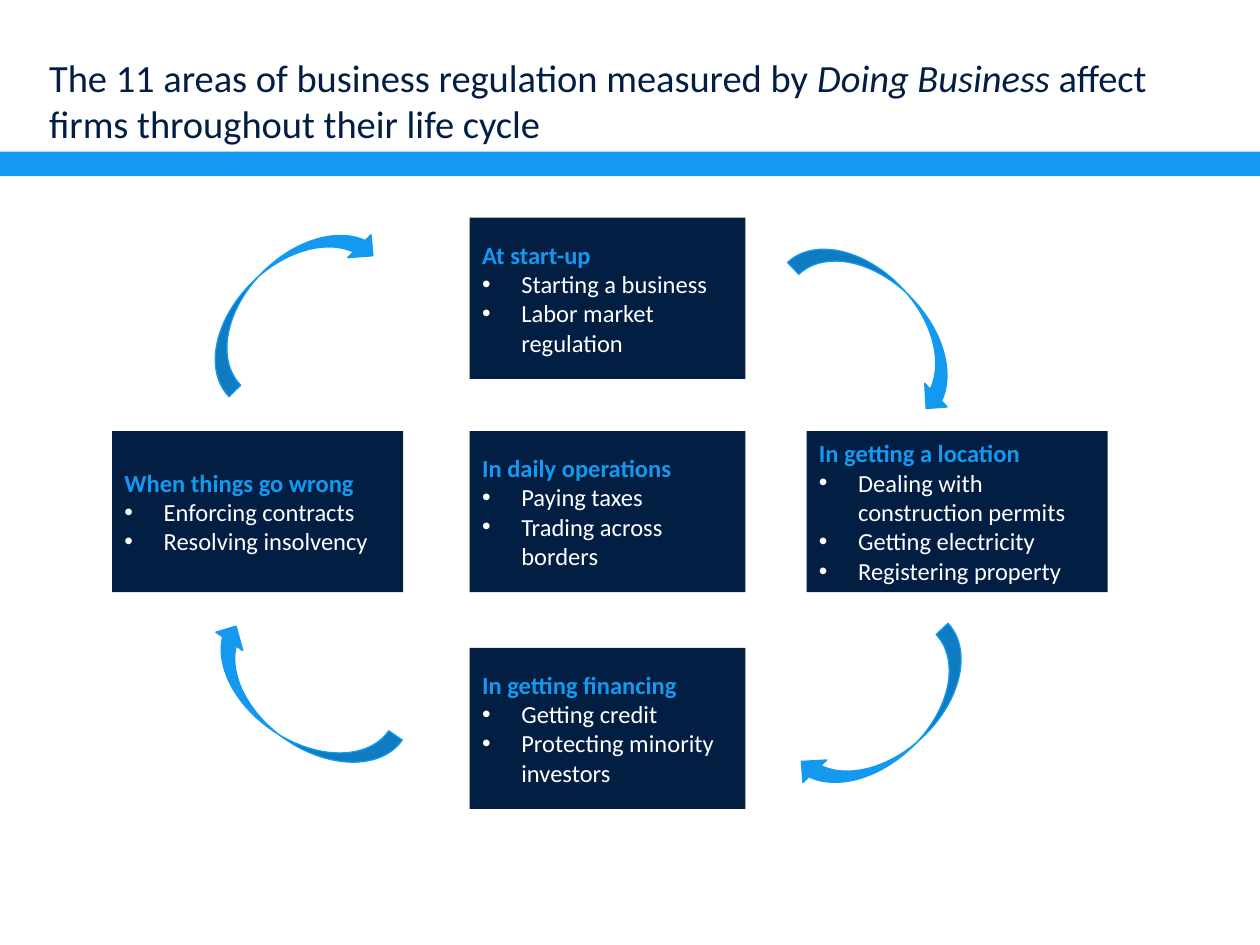
from lxml import etree
from pptx import Presentation
from pptx.dml.color import RGBColor
from pptx.enum.shapes import MSO_SHAPE
from pptx.enum.text import MSO_ANCHOR, MSO_AUTO_SIZE, PP_ALIGN
from pptx.oxml.ns import qn
from pptx.util import Cm, Pt

NAVY = RGBColor(0x02, 0x1F, 0x43)
BLUE = RGBColor(0x13, 0x9A, 0xF0)
WHITE = RGBColor(0xFF, 0xFF, 0xFF)
FONT = "Calibri"

ROW_TOPS = (4.39, 8.69, 13.06)
CENTER_X, CENTER_W = 9.47, 5.56
BOX_H = 3.25
ARROW_W, ARROW_H = 4.39, 1.32

# Left, top, width, heading, areas
STAGES = [
    (CENTER_X, ROW_TOPS[0], CENTER_W, "At start-up",
     ["Starting a business", "Labor market regulation"]),
    (CENTER_X, ROW_TOPS[1], CENTER_W, "In daily operations",
     ["Paying taxes", "Trading across borders"]),
    (CENTER_X, ROW_TOPS[2], CENTER_W, "In getting financing",
     ["Getting credit", "Protecting minority investors"]),
    (16.26, ROW_TOPS[1], 6.07, "In getting a location",
     ["Dealing with construction permits", "Getting electricity", "Registering property"]),
    (2.26, ROW_TOPS[1], 5.87, "When things go wrong",
     ["Enforcing contracts", "Resolving insolvency"]),
]

# Left, top, rotation: clockwise from the top right
ARROWS = [(15.67, 5.77, 46.5), (15.77, 13.89, 136.7),
          (3.73, 13.56, 214.4), (3.53, 5.33, 315.6)]


def set_attrs(obj, **values):
    for name, value in values.items():
        setattr(obj, name, value)


def add_run(p, text, color, **font):
    r = p.add_run()
    r.text = text
    set_attrs(r.font, name=FONT, **font)
    r.font.color.rgb = color


def add_filled(s, kind, box, color):
    sp = s.shapes.add_shape(kind, *map(Cm, box))
    sp.shadow.inherit = False
    sp.fill.solid()
    sp.fill.fore_color.rgb = color
    sp.line.fill.background()
    return sp


def add_bullet(p):
    pPr = p._p.get_or_add_pPr()
    pPr.set("marL", str(Cm(0.79)))
    pPr.set("indent", str(-Cm(0.79)))
    etree.SubElement(pPr, qn("a:buFont")).set("typeface", "Arial")
    etree.SubElement(pPr, qn("a:buChar")).set("char", "•")


def add_title(s, box):
    title = s.shapes.title
    left, top, width, height = map(Cm, box)
    set_attrs(title, left=left, top=top, width=width, height=height)
    tf = title.text_frame
    set_attrs(tf, word_wrap=True, auto_size=MSO_AUTO_SIZE.NONE,
              vertical_anchor=MSO_ANCHOR.BOTTOM, margin_left=0, margin_top=0,
              margin_right=0, margin_bottom=0)
    p = tf.paragraphs[0]
    p.alignment = PP_ALIGN.LEFT
    for text, italic in [("The 11 areas of business regulation measured by ", False),
                         ("Doing Business ", True),
                         ("affect firms throughout their life cycle", False)]:
        add_run(p, text, NAVY, size=Pt(22), italic=italic)


def add_stage(s, box, heading, areas):
    tf = add_filled(s, MSO_SHAPE.RECTANGLE, box, NAVY).text_frame
    set_attrs(tf, word_wrap=True, vertical_anchor=MSO_ANCHOR.MIDDLE)
    p = tf.paragraphs[0]
    p.alignment = PP_ALIGN.LEFT
    add_run(p, heading, BLUE, size=Pt(14), bold=True)
    for area in areas:
        p = tf.add_paragraph()
        p.alignment = PP_ALIGN.LEFT
        add_bullet(p)
        add_run(p, area, WHITE, size=Pt(14), bold=False)


def add_cycle_arrow(s, box, rotation):
    sp = add_filled(s, MSO_SHAPE.CURVED_DOWN_ARROW, box, BLUE)
    sp.rotation = rotation
    sp.line.color.rgb = BLUE
    sp.line.width = Pt(0.75)


def main():
    prs = Presentation()
    set_attrs(prs, slide_width=Cm(25.4), slide_height=Cm(19.05))
    s = prs.slides.add_slide(prs.slide_layouts[5])

    # Header
    add_filled(s, MSO_SHAPE.RECTANGLE, (0, 3.06, 25.4, 0.49), BLUE)
    add_title(s, (0.99, 0.84, 23.5, 2.11))

    # Life cycle stages
    for left, top, width, heading, areas in STAGES:
        add_stage(s, (left, top, width, BOX_H), heading, areas)

    # Arrows around the cycle
    for left, top, rotation in ARROWS:
        add_cycle_arrow(s, (left, top, ARROW_W, ARROW_H), rotation)

    prs.save("out.pptx")


if __name__ == "__main__":
    main()
